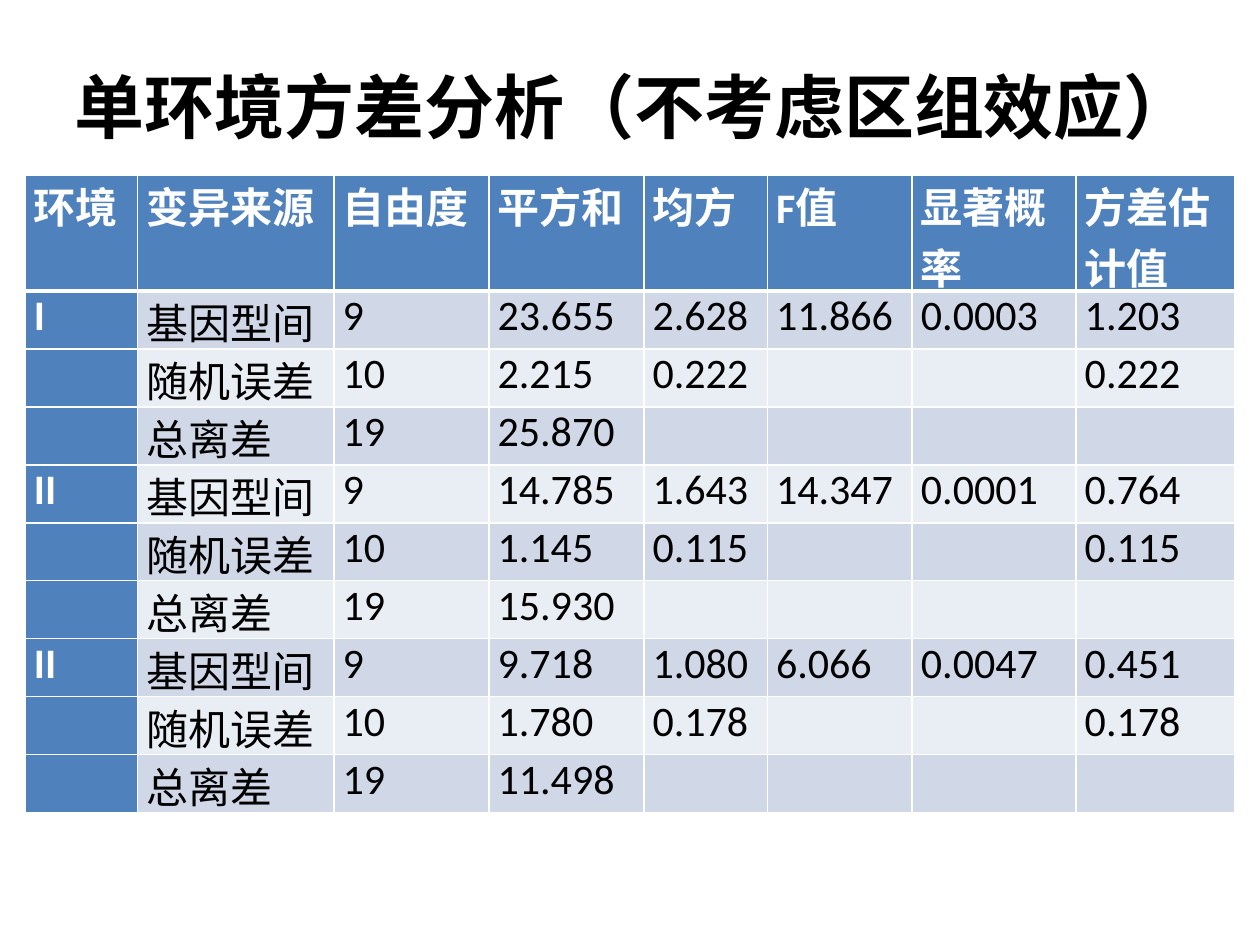
from lxml.etree import SubElement
from pptx import Presentation
from pptx.dml.color import RGBColor
from pptx.enum.text import MSO_ANCHOR, PP_ALIGN
from pptx.oxml.ns import qn
from pptx.util import Inches, Pt

COLORS = {"ink": "000000", "white": "FFFFFF", "blue": "4F81BD",
          "odd": "D0D8E8", "even": "E9EDF4"}
UNIT = 0.1  # grid step in inches: 100 columns by 75 rows

HEADS = ["环境", "变异来源", "自由度", "平方和", "均方", "F值", "显著概率", "方差估计值"]
SOURCES = ["基因型间", "随机误差", "总离差"]
DEGREES = ["9", "10", "19"]
# Per environment: name, then sums, mean squares, F, probability, variances
TRIALS = [
    ("I", ["23.655", "2.215", "25.870"], ["2.628", "0.222", ""],
     "11.866", "0.0003", ["1.203", "0.222", ""]),
    ("II", ["14.785", "1.145", "15.930"], ["1.643", "0.115", ""],
     "14.347", "0.0001", ["0.764", "0.115", ""]),
    ("II", ["9.718", "1.780", "11.498"], ["1.080", "0.178", ""],
     "6.066", "0.0047", ["0.451", "0.178", ""]),
]
WIDTHS = [8.9, 15.6, 12.3, 12.3, 9.8, 11.5, 13, 12.6]
HEAD_ROW, BODY_ROW = 9.2, 4.6


def grid(*steps):
    return [Inches(step * UNIT) for step in steps]


class Page:
    def __init__(self, deck):
        self.slide = deck.slides.add_slide(deck.slide_layouts[6])

    def text(self, para, words, size, font, color, bold):
        run = para.add_run()
        run.text = words
        run.font.size = Pt(size)
        run.font.name = font
        run.font.bold = bold
        run.font.color.rgb = RGBColor.from_string(COLORS[color])

    def title(self, words, *box):
        frame = self.slide.shapes.add_textbox(*grid(*box)).text_frame
        frame.word_wrap = True
        frame.vertical_anchor = MSO_ANCHOR.MIDDLE
        para = frame.paragraphs[0]
        para.alignment = PP_ALIGN.CENTER
        self.text(para, words, 40, "Times New Roman", "ink", True)

    def edge(self, cell, side, width):
        props = cell._tc.get_or_add_tcPr()
        line = SubElement(props, qn(f"a:ln{side}"), w=str(Pt(width)))
        fill = SubElement(line, qn("a:solidFill"))
        SubElement(fill, qn("a:srgbClr"), val=COLORS["white"])

    def cell(self, cell, words, row, col):
        strong = row == 0 or col == 0
        cell.margin_left = cell.margin_right = Inches(0.07)
        cell.margin_top = cell.margin_bottom = 0
        if words == SOURCES[-1]:
            cell.vertical_anchor = MSO_ANCHOR.MIDDLE
        # Borders come before the fill in the cell properties
        for side in "LRTB":
            heavy = (row, side) in ((0, "B"), (1, "T"))
            self.edge(cell, side, 3 if heavy else 1)
        band = "blue" if strong else "odd" if row % 2 else "even"
        cell.fill.solid()
        cell.fill.fore_color.rgb = RGBColor.from_string(COLORS[band])
        if words:
            color = "white" if strong else "ink"
            self.text(cell.text_frame.paragraphs[0], words, 24, "Calibri",
                      color, strong)

    def table(self, rows, left, top):
        heights = [HEAD_ROW] + [BODY_ROW] * (len(rows) - 1)
        box = grid(left, top, sum(WIDTHS), sum(heights))
        table = self.slide.shapes.add_table(len(rows), len(WIDTHS), *box).table
        for col, width in zip(table.columns, grid(*WIDTHS)):
            col.width = width
        for row, height in zip(table.rows, grid(*heights)):
            row.height = height
        for r, row in enumerate(rows):
            for c, words in enumerate(row):
                self.cell(table.cell(r, c), words, r, c)


def main():
    deck = Presentation()
    deck.slide_width, deck.slide_height = grid(100, 75)
    page = Page(deck)

    # Title
    page.title("单环境方差分析（不考虑区组效应）", 3.5, 4.4, 93.7, 7.9)

    # Variance table: three rows for each environment
    rows = [HEADS]
    for name, sums, means, ratio, chance, parts in TRIALS:
        once = zip([name, "", ""], [ratio, "", ""], [chance, "", ""])
        for i, (label, f, p) in enumerate(once):
            rows.append([label, SOURCES[i], DEGREES[i], sums[i], means[i],
                         f, p, parts[i]])
    page.table(rows, 2, 13.9)

    deck.save("out.pptx")


if __name__ == "__main__":
    main()
